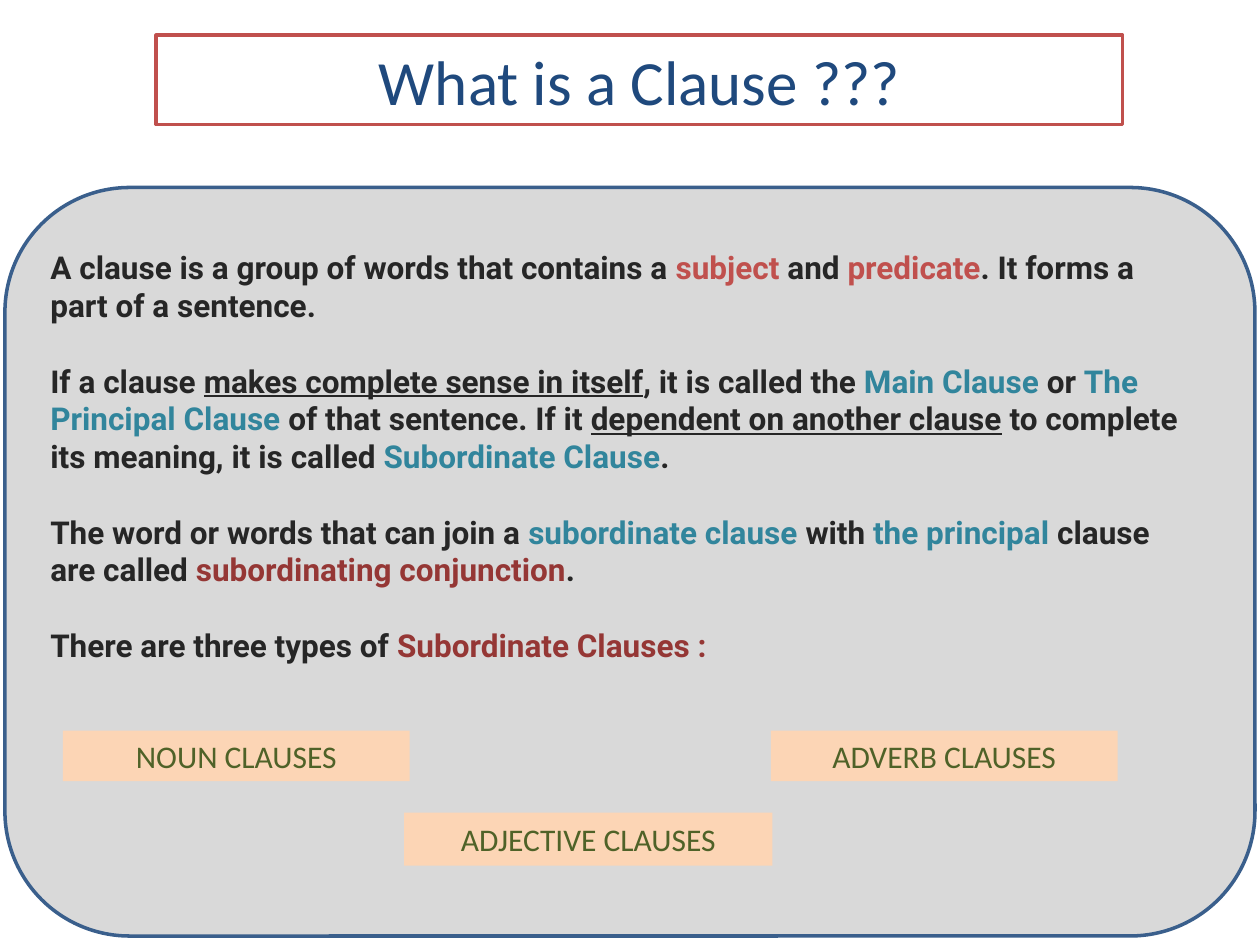
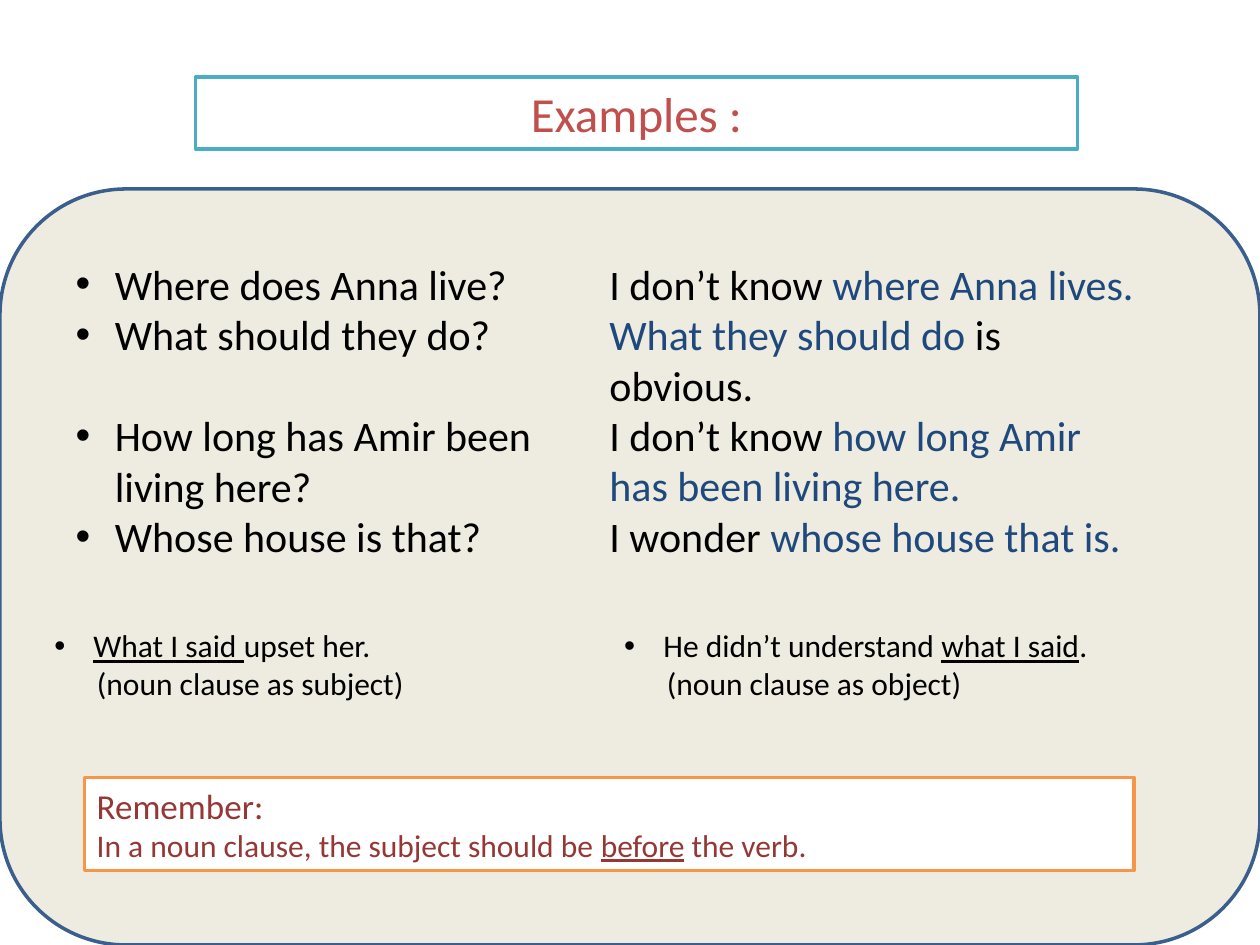
import pptx
import pptx.util
import pptx.dml.color
import pptx.enum.shapes
import pptx.enum.text
from lxml import etree
from pptx.oxml.ns import qn

Cm, Pt = pptx.util.Cm, pptx.util.Pt
ALIGN = pptx.enum.text.PP_ALIGN
ANCHOR = pptx.enum.text.MSO_ANCHOR
SHAPE = pptx.enum.shapes.MSO_SHAPE

WHITE, BLACK, INK = "FFFFFF", "000000", "262626"
NAVY, EDGE, TEAL, AQUA = "1F497D", "3A5F8C", "31859C", "4BACC6"
RED, MAROON, ORANGE = "C0504D", "953735", "F79646"
GREY, CREAM, PEACH, OLIVE = "D9D9D9", "EEECE1", "FCD5B5", "4F6228"
HANG = 0.79


def rgb(value):
    return pptx.dml.color.RGBColor.from_string(value)


def add_run(p, text, size=18, color=BLACK, font="Calibri", bold=False, underline=False):
    r = p.add_run()
    r.text = text
    r.font.size, r.font.name = Pt(size), font
    r.font.bold, r.font.underline = bold, underline
    r.font.color.rgb = rgb(color)


def para(*runs, bullet=False, indent=0, before=0):
    return {"runs": runs, "bullet": bullet, "indent": indent, "before": before}


class Deck:
    """Holds the shared style and the slide being built."""

    def __init__(self):
        self.prs = pptx.Presentation()
        self.prs.slide_width, self.prs.slide_height = Cm(25.4), Cm(19.05)
        self.s = None

    def new_slide(self, layout_name):
        layout = self.prs.slide_layouts.get_by_name(layout_name)
        self.s = self.prs.slides.add_slide(layout)

    def place(self, sp, box):
        sp.left, sp.top, sp.width, sp.height = (Cm(v) for v in box)

    def paint(self, sp, fill, line=None):
        sp.shadow.inherit = False
        sp.fill.solid()
        sp.fill.fore_color.rgb = rgb(fill)
        if line:
            sp.line.color.rgb = rgb(line)
            sp.line.width = Pt(2)
        else:
            sp.line.fill.background()

    def fill_text(self, sp, paras, align=ALIGN.LEFT, anchor=ANCHOR.MIDDLE, **style):
        tf = sp.text_frame
        tf.word_wrap = True
        tf.auto_size = pptx.enum.text.MSO_AUTO_SIZE.NONE
        tf.vertical_anchor = anchor
        for i, item in enumerate(paras):
            p = tf.paragraphs[0] if i == 0 else tf.add_paragraph()
            self.set_bullet(p, item["bullet"], item["indent"])
            p.alignment = align
            p.space_before = Pt(item["before"])
            for text, fmt in item["runs"]:
                add_run(p, text, **{**style, **fmt})

    def set_bullet(self, p, bullet, indent):
        pPr = p._p.get_or_add_pPr()
        pPr.set("marL", str(Cm(HANG if bullet else indent)))
        pPr.set("indent", str(-Cm(HANG) if bullet else 0))
        if bullet:
            etree.SubElement(pPr, qn("a:buFont")).set("typeface", "Arial")
            etree.SubElement(pPr, qn("a:buChar")).set("char", "•")
        else:
            etree.SubElement(pPr, qn("a:buNone"))

    def title(self, text, box, line, **style):
        sp = self.s.shapes.title
        self.place(sp, box)
        self.paint(sp, WHITE, line)
        self.fill_text(sp, [para((text, {}))], align=ALIGN.CENTER, **style)

    def panel(self, box, fill):
        sp = self.s.shapes.add_shape(SHAPE.ROUNDED_RECTANGLE, *(Cm(v) for v in box))
        self.paint(sp, fill, EDGE)
        self.s.shapes.title.element.addprevious(sp.element)

    def body(self, idx, box, paras, **style):
        sp = self.s.placeholders[idx]
        self.place(sp, box)
        self.fill_text(sp, paras, anchor=ANCHOR.TOP, **style)

    def label(self, box, paras, fill, line=None, align=ALIGN.CENTER, **style):
        sp = self.s.shapes.add_shape(SHAPE.RECTANGLE, *(Cm(v) for v in box))
        self.paint(sp, fill, line)
        self.fill_text(sp, paras, align=align, **style)


def build_definition(deck):
    deck.new_slide("Title and Content")
    deck.title("What is a Clause ???", (3.15, 0.71, 19.48, 1.8), RED, size=36, color=NAVY)
    deck.panel((0.1, 3.78, 25.2, 15.09), GREY)
    red, teal, maroon = {"color": RED}, {"color": TEAL}, {"color": MAROON}
    under, gap = {"underline": True}, 21.5
    deck.body(1, (0.76, 4.88, 23.42, 9.5), [
        para(("A clause is a group of words that contains a ", {}), ("subject", red),
             (" and ", {}), ("predicate", red),
             (". It forms a part of a sentence.", {})),
        para(("If a clause ", {}), ("makes complete sense in itself", under),
             (", it is called the ", {}), ("Main Clause", teal), (" or ", {}),
             ("The Principal Clause", teal), (" of that sentence. If it ", {}),
             ("dependent on another clause", under),
             (" to complete its meaning, it is called ", {}),
             ("Subordinate Clause", teal), (".", {}), before=gap),
        para(("The word or words that can join a ", {}), ("subordinate clause ", teal),
             ("with ", {}), ("the principal ", teal), ("clause are called ", {}),
             ("subordinating conjunction", maroon), (".", {}), before=gap),
        para(("There are three types of ", {}), ("Subordinate Clauses :", maroon),
             before=gap),
    ], font="Roboto", bold=True, color=INK)
    clause_types = [
        ("NOUN CLAUSES", (1.27, 14.73, 6.99, 1.02)),
        ("ADJECTIVE CLAUSES", (8.15, 16.38, 7.42, 1.07)),
        ("ADVERB CLAUSES", (15.54, 14.73, 6.99, 1.02)),
    ]
    for name, box in clause_types:
        deck.label(box, [para((name, {}))], PEACH, color=OLIVE)


def build_examples(deck):
    deck.new_slide("Comparison")
    deck.title("Examples :", (3.94, 1.55, 17.78, 1.45), AQUA, size=28, color=RED)
    deck.panel((0, 3.81, 25.4, 15.24), CREAM)
    navy, under = {"color": NAVY}, {"underline": True}
    questions = [
        para(("Where does Anna live?", {}), bullet=True),
        para(("What should they do?", {}), bullet=True),
        para(("How long has Amir been living here?", {}), bullet=True, before=29),
        para(("Whose house is that?", {}), bullet=True),
    ]
    answers = [
        para(("I don’t know ", {}), ("where Anna lives.", navy)),
        para(("What they should do ", navy), ("is obvious.", {})),
        para(("I don’t know ", {}), ("how long Amir has been living here.", navy)),
        para(("I wonder ", {}), ("whose house that is.", navy)),
    ]
    as_subject = [
        para(("What I said ", under), ("upset her.", {}), bullet=True),
        para(("(noun clause as subject)", {}), indent=0.86),
    ]
    as_object = [
        para(("He didn’t understand ", {}), ("what I said", under), (".", {}), bullet=True),
        para(("(noun clause as object)", {}), indent=0.86),
    ]
    for col, (pair, usage) in enumerate([(questions, as_subject), (answers, as_object)]):
        deck.body(1 + 2 * col, (1.27 + 10.76 * col, 5.08, 11.26, 7.4), pair, size=24)
        deck.body(2 + 2 * col, (0.84 + 11.49 * col, 12.5, 12, 1.8), usage)
    deck.label((1.7, 15.67, 21.16, 1.88), [
        para(("Remember:", {"size": 20})),
        para(("In a noun clause, the subject should be ", {}), ("before", under),
             (" the verb.", {})),
    ], WHITE, ORANGE, align=ALIGN.LEFT, color=MAROON)


def main():
    deck = Deck()
    build_definition(deck)
    build_examples(deck)
    deck.prs.save("out.pptx")


if __name__ == "__main__":
    main()
